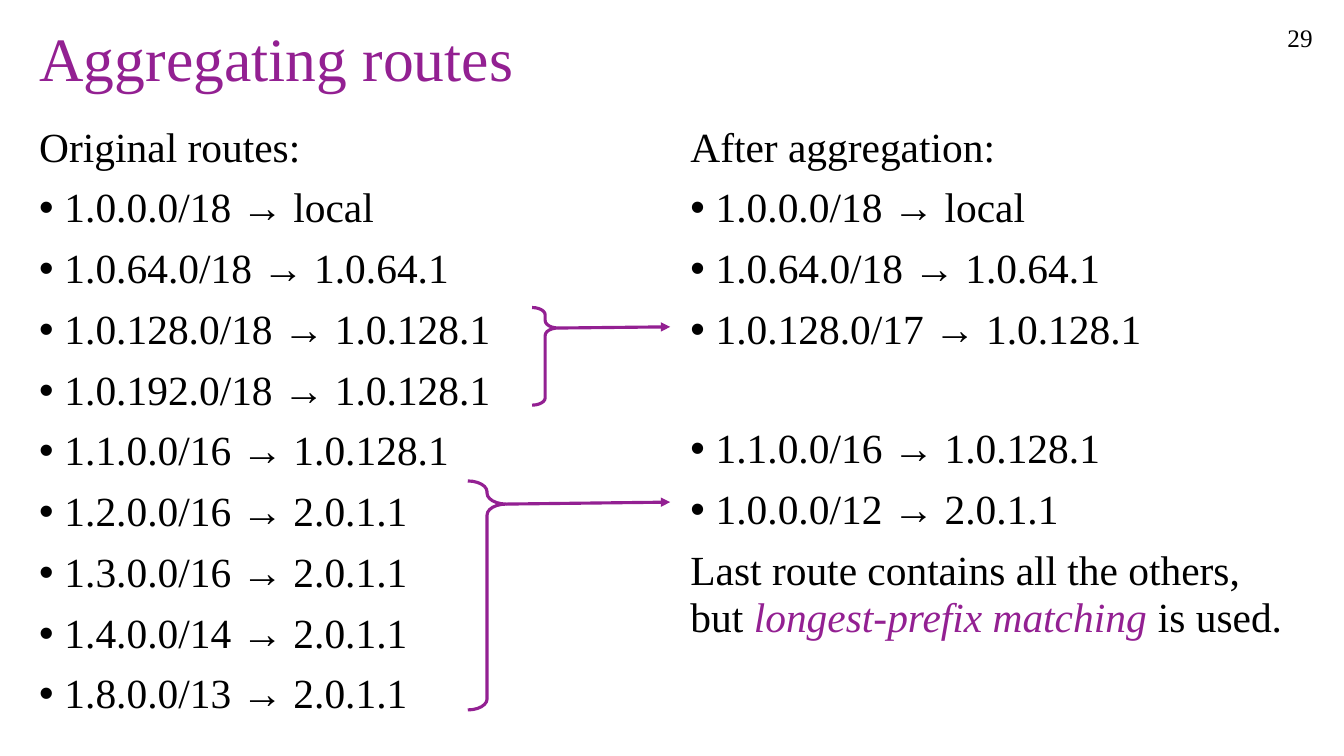
import pptx
import pptx.util
import pptx.dml.color
import pptx.enum.shapes
import pptx.enum.text
import pptx.oxml.ns
from lxml import etree

Cm, Pt = pptx.util.Cm, pptx.util.Pt
RGB = pptx.dml.color.RGBColor
ALIGN = pptx.enum.text.PP_ALIGN
ANCHOR = pptx.enum.text.MSO_ANCHOR
SHAPE = pptx.enum.shapes.MSO_SHAPE
LINK = pptx.enum.shapes.MSO_CONNECTOR
qn = pptx.oxml.ns.qn

PURPLE = RGB(0x93, 0x20, 0x92)
BLACK = RGB(0, 0, 0)
FACE = "Times New Roman"

TITLE = "Aggregating routes"
NUMBER = "29"
OLD = ("Original routes:", [
    "1.0.0.0/18 → local",
    "1.0.64.0/18 → 1.0.64.1",
    "1.0.128.0/18 → 1.0.128.1",
    "1.0.192.0/18 → 1.0.128.1",
    "1.1.0.0/16 → 1.0.128.1",
    "1.2.0.0/16 → 2.0.1.1",
    "1.3.0.0/16 → 2.0.1.1",
    "1.4.0.0/14 → 2.0.1.1",
    "1.8.0.0/13 → 2.0.1.1",
])
NEW = ("After aggregation:", [
    "1.0.0.0/18 → local",
    "1.0.64.0/18 → 1.0.64.1",
    "1.0.128.0/17 → 1.0.128.1",
    "1.1.0.0/16 → 1.0.128.1",
    "1.0.0.0/12 → 2.0.1.1",
])
SPLIT = 3  # the new route that leaves one row free above it
NOTE = [("Last route contains all the others, but ", False),
        ("longest-prefix matching ", True),
        ("is used.", False)]

# Lengths in cm
LEFT, MID, TOP = 0.74, 17.15, 3.02
HIGH = 15.62
HEAD = 16.89  # where both arrows end
# box, bend, tip position, rise of the arrow
BRACES = [((13.41, 7.75, 0.66, 2.46), 0.283, 0.21, 0.03),
          ((11.79, 12.12, 0.97, 5.77), 0.283, 0.101, 0.05)]

SIZE = 29.6
GAP, ROW = 10, 42  # points before a paragraph, points per row


def write(par, text, size=SIZE, color=BLACK, italic=False):
    run = par.add_run()
    run.text = text
    look = {"name": FACE, "size": Pt(size), "italic": italic}
    for key, val in look.items():
        setattr(run.font, key, val)
    run.font.color.rgb = color


def dot(par):
    props = par._p.get_or_add_pPr()
    props.set("marL", str(Cm(0.635)))
    props.set("indent", str(-Cm(0.635)))
    etree.SubElement(props, qn("a:buFont")).set("typeface", "Arial")
    etree.SubElement(props, qn("a:buChar")).set("char", "•")


def column(slide, box, routes, split=None, note=()):
    """Add a heading, its bulleted routes and a closing note."""
    frame = slide.shapes.add_textbox(*map(Cm, box)).text_frame
    frame.word_wrap = True
    head, items = routes
    rows = [([(head, False)], False)]
    rows += [([(item, False)], True) for item in items]
    if note:
        rows.append((note, False))
    for num, (runs, mark) in enumerate(rows):
        par = frame.add_paragraph() if num else frame.paragraphs[0]
        gap = GAP + ROW if split and num == split + 1 else GAP
        look = {"line_spacing": 0.94, "space_before": Pt(gap if num else 0)}
        for key, val in look.items():
            setattr(par, key, val)
        if mark:
            dot(par)
        for text, key in runs:
            write(par, text, color=PURPLE if key else BLACK, italic=key)


def ink(line):
    line.color.rgb = PURPLE
    line.width = Pt(2.25)


def merge(slide, box, bend, tip, rise):
    """Add a brace and an arrow that runs from its tip."""
    group = slide.shapes.add_group_shape().shapes
    brace = group.add_shape(SHAPE.RIGHT_BRACE, *map(Cm, box))
    brace.shadow.inherit = False
    brace.fill.background()
    brace.adjustments[0], brace.adjustments[1] = bend, tip
    ink(brace.line)
    left, top, wide, high = box
    y = top + tip * high
    arrow = group.add_connector(LINK.STRAIGHT, Cm(left + wide), Cm(y),
                                Cm(HEAD), Cm(y - rise))
    ink(arrow.line)
    props = arrow._element.spPr
    end = etree.SubElement(props.find(qn("a:ln")), qn("a:tailEnd"))
    end.set("type", "triangle")
    etree.SubElement(props, qn("a:effectLst"))


def main():
    deck = pptx.Presentation()
    deck.slide_width, deck.slide_height = Cm(33.87), Cm(19.05)
    slide = deck.slides.add_slide(deck.slide_layouts[5])

    title = slide.shapes.title
    place = {"left": LEFT, "top": 0.43, "width": 32.33, "height": 2.24}
    for key, val in place.items():
        setattr(title, key, Cm(val))
    title.text_frame.vertical_anchor = ANCHOR.MIDDLE
    par = title.text_frame.paragraphs[0]
    par.alignment, par.line_spacing = ALIGN.LEFT, 0.9
    write(par, TITLE, 44, PURPLE)

    page = slide.shapes.add_textbox(Cm(31.65), Cm(0.43), Cm(1.68), Cm(1.02))
    page.text_frame.word_wrap = True
    par = page.text_frame.paragraphs[0]
    par.alignment = ALIGN.RIGHT
    write(par, NUMBER, 18)

    column(slide, (LEFT, TOP, 16, HIGH), OLD)
    column(slide, (MID, TOP, 15.93, HIGH), NEW, SPLIT, NOTE)
    for brace in BRACES:
        merge(slide, *brace)
    deck.save("out.pptx")


if __name__ == "__main__":
    main()
